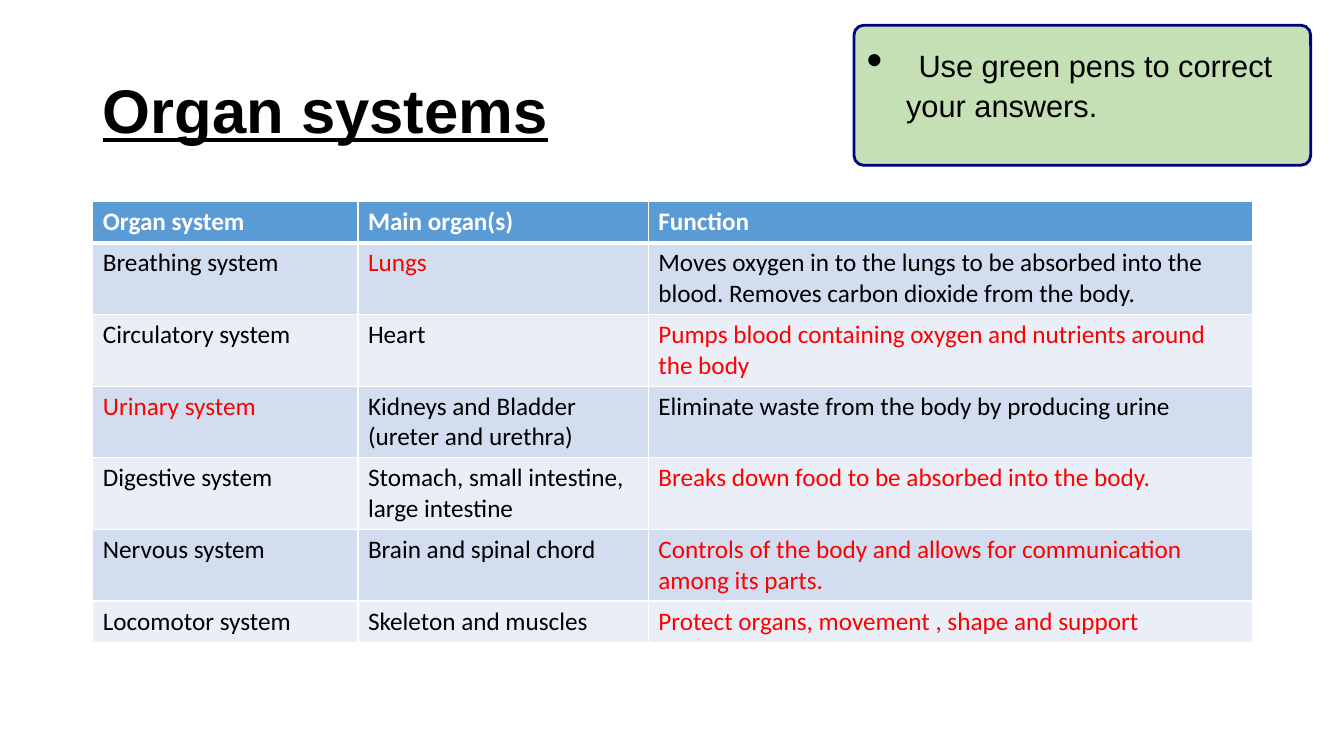
"""Build the organ systems answer slide."""
from lxml import etree
from pptx import Presentation
from pptx.dml.color import RGBColor
from pptx.enum import shapes, text
from pptx.oxml import ns
from pptx.util import Inches, Pt

TITLE = "Organ systems"
NOTE = "Use green pens to correct your answers."
HEADINGS = ("Organ system", "Main organ(s)", "Function")
SYSTEMS = [
    ("Breathing system", "Lungs",
     "Moves oxygen in to the lungs to be absorbed into the blood. "
     "Removes carbon dioxide from the body."),
    ("Circulatory system", "Heart",
     "Pumps blood containing oxygen and nutrients around the body"),
    ("Urinary system", "Kidneys and Bladder (ureter and urethra)",
     "Eliminate waste from the body by producing urine"),
    ("Digestive system", "Stomach, small intestine, large intestine",
     "Breaks down food to be absorbed into the body."),
    ("Nervous system", "Brain and spinal chord",
     "Controls of the body and allows for communication among its parts."),
    ("Locomotor system", "Skeleton and muscles",
     "Protect organs, movement , shape and support"),
]
ANSWER_COLUMNS = (1, 2, 0, 2, 2, 2)
COLUMN_WIDTHS = (2.63, 2.88, 5.99)
ROW_HEIGHT = 0.41
LEFT, WIDTH = 0.92, 11.5

BLACK = RGBColor(0, 0, 0)
WHITE = RGBColor(255, 255, 255)
RED = RGBColor(255, 0, 0)
NAVY = RGBColor(0, 0, 0x80)
GREEN = RGBColor(0xC5, 0xE0, 0xB4)
HEADER_BLUE = RGBColor(0x5B, 0x9B, 0xD5)
BANDS = (RGBColor(0xD2, 0xDE, 0xEF), RGBColor(0xEA, 0xEF, 0xF7))


def style(span, font, size, color, bold=False):
    span.font.name = font
    span.font.size = Pt(size)
    span.font.color.rgb = color
    span.font.bold = bold


def add_borders(cell, bottom):
    props = cell._tc.get_or_add_tcPr()
    for place, (side, width) in enumerate(
            (("lnL", 1), ("lnR", 1), ("lnT", 1), ("lnB", bottom))):
        line = etree.Element(ns.qn("a:" + side), w=str(Pt(width)))
        fill = etree.SubElement(line, ns.qn("a:solidFill"))
        etree.SubElement(fill, ns.qn("a:srgbClr"), val=str(WHITE))
        props.insert(place, line)


def fill_cell(cell, words, background, color, header):
    cell.text = words
    style(cell.text_frame.paragraphs[0].runs[0], "Calibri", 18, color, header)
    cell.fill.solid()
    cell.fill.fore_color.rgb = background
    add_borders(cell, 3 if header else 1)


def add_title(page):
    title = page.shapes.title
    title.left, title.top = Inches(LEFT), Inches(0.4)
    title.width, title.height = Inches(WIDTH), Inches(1.45)
    title.text_frame.text = TITLE
    title.text_frame.vertical_anchor = text.MSO_ANCHOR.MIDDLE
    para = title.text_frame.paragraphs[0]
    para.alignment = text.PP_ALIGN.LEFT
    para.line_spacing = 0.9
    style(para.runs[0], "Arial", 44, BLACK, True)
    para.runs[0].font.underline = True


def add_systems_table(page):
    rows = [HEADINGS] + SYSTEMS
    table = page.shapes.add_table(
        len(rows), len(HEADINGS), Inches(LEFT), Inches(2),
        Inches(WIDTH), Inches(ROW_HEIGHT * len(rows))).table
    for column, width in zip(table.columns, COLUMN_WIDTHS):
        column.width = Inches(width)
    for r, row in enumerate(rows):
        table.rows[r].height = Inches(ROW_HEIGHT)
        for c, words in enumerate(row):
            if r == 0:
                background, color = HEADER_BLUE, WHITE
            else:
                background = BANDS[(r - 1) % 2]
                color = RED if c == ANSWER_COLUMNS[r - 1] else BLACK
            fill_cell(table.cell(r, c), words, background, color, r == 0)


def add_note(page):
    box = page.shapes.add_shape(
        shapes.MSO_SHAPE.ROUNDED_RECTANGLE,
        Inches(8.47), Inches(0.25), Inches(4.53), Inches(1.39))
    box.adjustments[0] = 0.07
    box.shadow.inherit = False
    box.fill.solid()
    box.fill.fore_color.rgb = GREEN
    box.line.color.rgb = NAVY
    box.line.width = Pt(2)
    box.text_frame.word_wrap = True
    box.text_frame.vertical_anchor = text.MSO_ANCHOR.TOP
    para = box.text_frame.paragraphs[0]
    para.alignment = text.PP_ALIGN.LEFT
    for words, size, bold in ((" ", 32, True), (NOTE, 22, False)):
        span = para.add_run()
        span.text = words
        style(span, "Arial", size, BLACK, bold)
    props = para._p.get_or_add_pPr()
    props.set("marL", str(Inches(0.39)))
    props.set("indent", str(-Inches(0.39)))
    etree.SubElement(props, ns.qn("a:buFont"), typeface="Arial")
    etree.SubElement(props, ns.qn("a:buChar"), char="•")


def main():
    deck = Presentation()
    deck.slide_width, deck.slide_height = Inches(13.33), Inches(7.5)
    page = deck.slides.add_slide(deck.slide_layouts[5])
    add_title(page)
    add_systems_table(page)
    add_note(page)
    deck.save("out.pptx")


if __name__ == "__main__":
    main()
